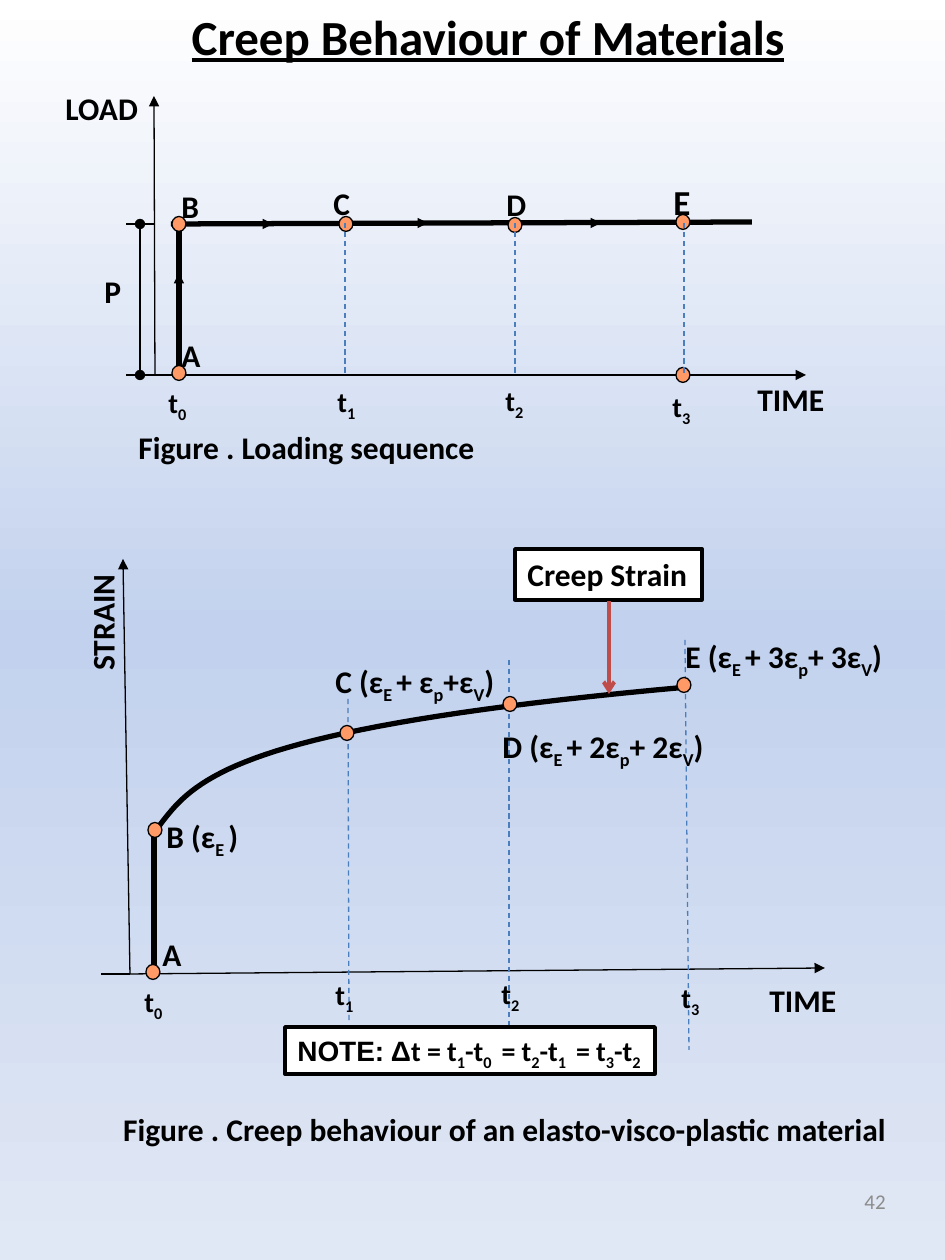
from copy import deepcopy

from pptx import Presentation
from pptx.dml.color import RGBColor
from pptx.enum.dml import MSO_LINE
from pptx.enum.shapes import MSO_CONNECTOR, MSO_SHAPE
from pptx.enum.text import MSO_ANCHOR, MSO_AUTO_SIZE, PP_ALIGN
from pptx.oxml.ns import qn
from pptx.util import Pt
from lxml.etree import SubElement

PX = 914400 / 126
BLACK = RGBColor(0x00, 0x00, 0x00)
WHITE = RGBColor(0xFF, 0xFF, 0xFF)
ORANGE = RGBColor(0xFF, 0x99, 0x66)
BLUE = RGBColor(0x4B, 0x7E, 0xBC)
RED = RGBColor(0xBF, 0x4C, 0x48)
GRAY = RGBColor(0x8C, 0x8C, 0x8C)
SKY = [(0, WHITE), (0.5, RGBColor(0xC2, 0xD1, 0xED)), (1, RGBColor(0xE1, 0xE8, 0xF5))]


def px(*values):
    return [round(v * PX) for v in values]


def set_background(s):
    fill = s.background.fill
    fill.gradient()
    fill.gradient_angle = 270
    first = fill.gradient_stops[0]._gs
    first.addnext(deepcopy(first))
    for stop, (position, color) in zip(fill.gradient_stops, SKY):
        stop.position = position
        stop.color.rgb = color


def add_run(p, text, size, color=BLACK, bold=True, font="Calibri", sub=False):
    r = p.add_run()
    r.text = text
    r.font.name, r.font.size, r.font.bold = font, Pt(size), bold
    r.font.color.rgb = color
    if sub:
        r._r.get_or_add_rPr().set("baseline", "-25000")
    return r


def add_label(shapes, text, x, y, w, h, size=18, wrap=False, align=PP_ALIGN.LEFT):
    sp = shapes.add_textbox(*px(x, y, w, h))
    tf = sp.text_frame
    tf.word_wrap = wrap
    tf.auto_size = MSO_AUTO_SIZE.SHAPE_TO_FIT_TEXT
    p = tf.paragraphs[0]
    p.alignment = align
    for i, part in enumerate(text.split("|")):
        if part:
            add_run(p, part, size, sub=i % 2 == 1)
    return sp


def add_frame(sp):
    sp.fill.solid()
    sp.fill.fore_color.rgb = WHITE
    sp.line.color.rgb = BLACK
    sp.line.width = Pt(2)


def add_line(shapes, x1, y1, x2, y2, width=0.75, color=BLACK, head=None, tail=None, dash=False):
    c = shapes.add_connector(MSO_CONNECTOR.STRAIGHT, *px(x1, y1, x2, y2))
    c.line.color.rgb = color
    c.line.width = Pt(width)
    if dash:
        c.line.dash_style = MSO_LINE.DASH
    ln = c.line._get_or_add_ln()
    for tag, kind in (("a:headEnd", head), ("a:tailEnd", tail)):
        if kind:
            SubElement(ln, qn(tag), type=kind)
    SubElement(c._element.spPr, qn("a:effectLst"))


def add_dot(shapes, x, y):
    sp = shapes.add_shape(MSO_SHAPE.OVAL, *px(x - 7, y - 7.5, 14, 15))
    sp.shadow.inherit = False
    sp.fill.solid()
    sp.fill.fore_color.rgb = ORANGE
    sp.line.color.rgb = BLACK
    sp.line.width = Pt(0.75)


def add_curve(shapes, controls, steps=40):
    points = []
    for i in range(steps + 1):
        t = i / steps
        weights = ((1 - t) ** 3, 3 * t * (1 - t) ** 2, 3 * t * t * (1 - t), t ** 3)
        points.append(px(*(sum(w * c[k] for w, c in zip(weights, controls)) for k in (0, 1))))
    builder = shapes.build_freeform(*points[0])
    builder.add_line_segments(points[1:], close=False)
    sp = builder.convert_to_shape()
    sp.shadow.inherit = False
    sp.fill.background()
    sp.line.color.rgb = BLACK
    sp.line.width = Pt(3)


def add_times(shapes, positions):
    for i, (x, y) in enumerate(positions):
        add_label(shapes, f"t|{i}", x, y, 44, 47, size=16)


def add_loading_figure(shapes):
    add_line(shapes, 171, 224, 752, 222, width=3)
    add_line(shapes, 155, 375, 806, 375, tail="triangle")
    add_line(shapes, 155, 375, 154, 96, tail="triangle")
    add_line(shapes, 179, 375, 179, 224, width=3)
    for y in (224, 375):
        add_line(shapes, 155, y, 126, y)
    add_line(shapes, 140, 224, 140, 375, head="oval", tail="oval")
    add_line(shapes, 179, 307, 179, 273, tail="triangle")
    for x, y in ((258, 224), (413, 223), (586, 223)):
        add_line(shapes, x, y, x + 15, y, tail="triangle")
    for x, y in ((179, 373), (179, 224), (346, 224), (515, 225), (683, 375), (683, 222)):
        add_dot(shapes, x, y)
    for x in (345, 515, 684):
        add_line(shapes, x, 223, x, 376, color=BLUE, dash=True)
    for text, x, y, w in (("LOAD", 53, 83, 98), ("TIME", 745, 374, 93), ("P", 92, 266, 43),
                          ("A", 169, 330, 44), ("B", 169, 181, 43), ("C", 321, 178, 43),
                          ("D", 494, 179, 66)):
        add_label(shapes, text, x, y, w, 50)
    add_label(shapes, "E", 661, 174, 66, 55, size=20)
    add_times(shapes, ((156, 379), (325, 378), (493, 377), (660, 383)))
    add_label(shapes, "Figure . Loading sequence", 126, 422, 850, 50, wrap=True)


def add_strain_figure(shapes):
    add_curve(shapes, ((157, 829), (194, 779), (231, 728), (688, 687)))
    add_line(shapes, 154, 971, 154, 829, width=3)
    add_line(shapes, 130, 974, 825, 968, tail="triangle")
    add_line(shapes, 130, 974, 123, 559, tail="triangle")
    add_line(shapes, 130, 974, 101, 974)
    for x1, y1, x2, y2 in ((348, 699, 349, 1021), (509, 660, 509, 1048), (685, 640, 689, 1050)):
        add_line(shapes, x1, y1, x2, y2, color=BLUE, dash=True)
    for x, y in ((153, 972), (155, 830), (347, 733), (510, 704), (684, 685)):
        add_dot(shapes, x, y)
    strain = add_label(shapes, "STRAIN", 77, 573, 63, 110)
    strain.text_frame._txBody.bodyPr.set("vert", "vert270")
    add_times(shapes, ((132, 978), (323, 971), (489, 970), (669, 974)))
    for text, x, y, w, h in (("TIME", 757, 975, 93, 50),
                             ("A", 150, 929, 44, 50),
                             ("B (ε|E |)", 154, 811, 100, 77),
                             ("C (ε|E |+ ε|p|+ε|V|)", 323, 656, 188, 77),
                             ("D (ε|E |+ 2ε|p|+ 2ε|V|)", 490, 721, 231, 77),
                             ("E (ε|E |+ 3ε|p|+ 3ε|V|)", 673, 631, 231, 77)):
        add_label(shapes, text, x, y, w, h)
    note = add_label(shapes, "", 285, 1027, 370, 47, wrap=True)
    p = note.text_frame.paragraphs[0]
    add_run(p, "ΝΟΤΕ: Δ", 16, font="Arial")
    for i, part in enumerate("t = t|1|-t|0 | = t|2|-t|1 | = t|3|-t|2".split("|")):
        add_run(p, part, 16, sub=i % 2 == 1)
    add_frame(note)
    add_frame(add_label(shapes, "Creep Strain", 515, 549, 187, 51))
    add_line(shapes, 609, 601, 609, 694, width=2.25, color=RED, tail="arrow")
    add_label(shapes, "Figure . Creep behaviour of an elasto-visco-plastic material",
              103, 1104, 804, 50, wrap=True, align=PP_ALIGN.CENTER)


def add_page_number(shapes):
    sp = shapes.add_textbox(*px(678, 1168, 220, 67))
    tf = sp.text_frame
    tf.word_wrap = True
    tf.vertical_anchor = MSO_ANCHOR.MIDDLE
    p = tf.paragraphs[0]
    p.alignment = PP_ALIGN.RIGHT
    add_run(p, "42", 12, color=GRAY, bold=False)


def main():
    prs = Presentation()
    prs.slide_width, prs.slide_height = px(945, 1260)
    s = prs.slides.add_slide(prs.slide_layouts[6])
    set_background(s)
    add_page_number(s.shapes)
    add_loading_figure(s.shapes.add_group_shape().shapes)
    add_strain_figure(s.shapes.add_group_shape().shapes)
    title = add_label(s.shapes, "Creep Behaviour of Materials", 86, 0, 804, 72,
                      size=28, wrap=True, align=PP_ALIGN.CENTER)
    title.text_frame.paragraphs[0].runs[0].font.underline = True
    prs.save("out.pptx")


if __name__ == "__main__":
    main()
